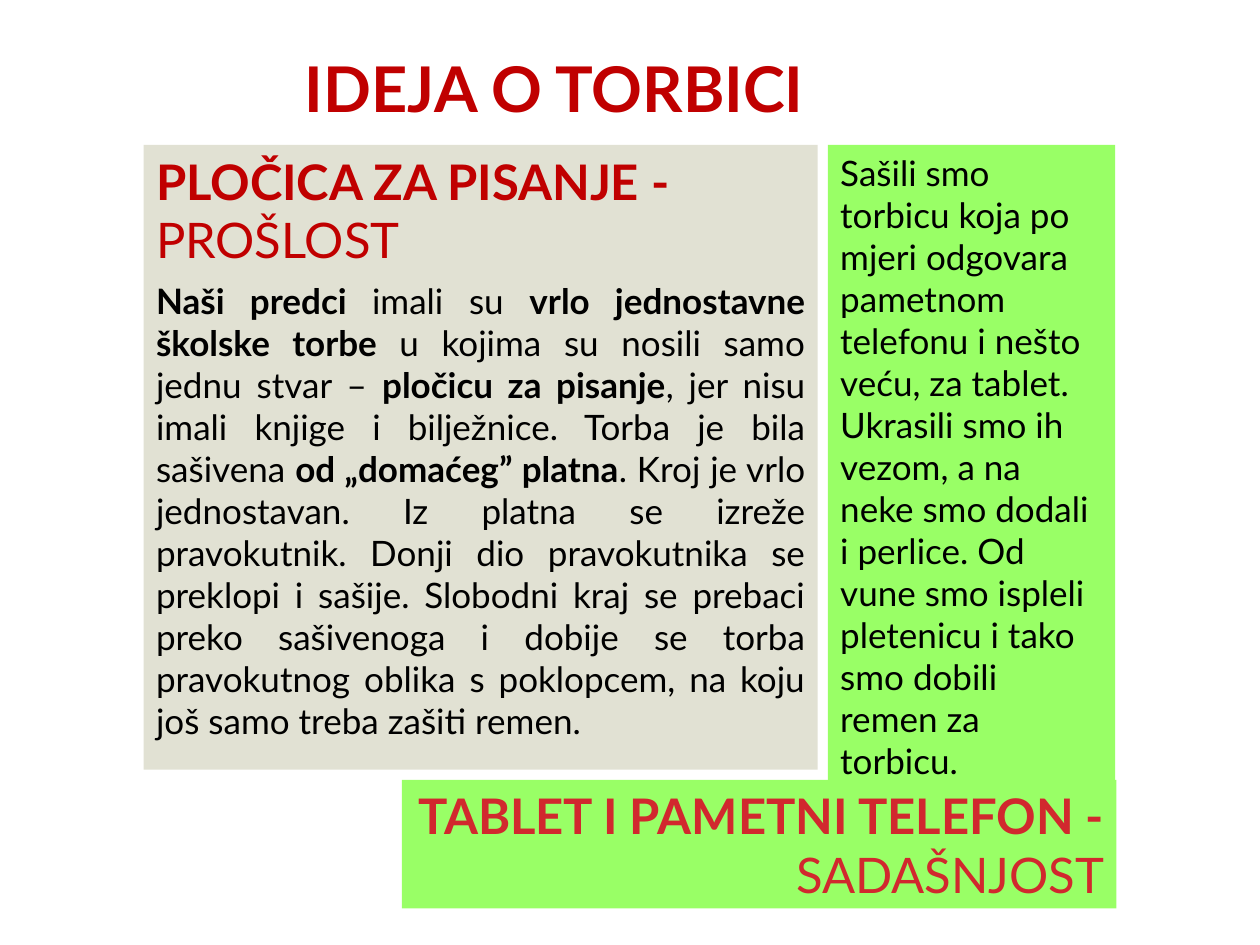
import pptx
import pptx.util
import pptx.dml.color
import pptx.enum.shapes
import pptx.enum.text

Inches = pptx.util.Inches
Pt = pptx.util.Pt
ALIGN = pptx.enum.text.PP_ALIGN
ANCHOR = pptx.enum.text.MSO_ANCHOR

RED, ROSE, BLACK = "C00000", "D1282E", "000000"
SAND, LIME = "E1E1D3", "99FF66"


def color(code):
    return pptx.dml.color.RGBColor.from_string(code)


def write(para, parts, size=20, tint=BLACK, align=ALIGN.LEFT, bold=True,
          before=0, face="Lato"):
    """Fill a paragraph; bold flips from each part to the next."""
    para.alignment = align
    para.space_before = Pt(before)
    for part in parts:
        run = para.add_run()
        run.text = part
        font = run.font
        font.name, font.size, font.bold = face, Pt(size), bold
        font.color.rgb = color(tint)
        bold = not bold


class Deck:
    def __init__(self, wide, high):
        self.show = pptx.Presentation()
        self.show.slide_width = Inches(wide)
        self.show.slide_height = Inches(high)
        self.slide = self.show.slides.add_slide(self.show.slide_layouts[6])

    def title(self, area, text, **style):
        box = self.slide.shapes.add_textbox(*map(Inches, area))
        frame = box.text_frame
        frame.word_wrap = True
        frame.vertical_anchor = ANCHOR.BOTTOM
        frame.margin_left = frame.margin_right = Inches(0.05)
        frame.margin_top = frame.margin_bottom = 0
        write(frame.paragraphs[0], [text], **style)

    def panel(self, area, fill, anchor=ANCHOR.TOP):
        kind = pptx.enum.shapes.MSO_SHAPE.RECTANGLE
        box = self.slide.shapes.add_shape(kind, *map(Inches, area))
        box.shadow.inherit = False
        box.fill.solid()
        box.fill.fore_color.rgb = color(fill)
        box.line.fill.background()
        frame = box.text_frame
        frame.word_wrap = True
        frame.vertical_anchor = anchor
        return frame


def main():
    deck = Deck(10, 7.5)
    deck.title((0.5, 0.35, 7.92, 0.64), "IDEJA O TORBICI ",
               size=36, tint=RED, align=ALIGN.CENTER)

    # Present: heading below
    now = deck.panel((3.19, 6.19, 5.67, 1.02), LIME, ANCHOR.MIDDLE)
    write(now.paragraphs[0], ["TABLET I PAMETNI TELEFON - ", "SADAŠNJOST"],
          size=28, tint=ROSE, align=ALIGN.RIGHT)

    # Past: heading and story
    past = deck.panel((1.14, 1.15, 5.35, 4.96), SAND)
    write(past.paragraphs[0], ["PLOČICA ZA PISANJE - ", "PROŠLOST"],
          size=28, tint=RED)
    write(past.add_paragraph(), [
        "Naši predci ",
        "imali su ",
        "vrlo jednostavne školske torbe ",
        "u kojima su nosili samo jednu stvar – ",
        "pločicu za pisanje",
        ", jer nisu imali knjige i bilježnice. Torba je bila sašivena ",
        "od „domaćeg” platna",
        ". Kroj je vrlo jednostavan. Iz platna se izreže pravokutnik. "
        "Donji dio pravokutnika se preklopi i sašije. Slobodni kraj se "
        "prebaci preko sašivenoga i dobije se torba pravokutnog oblika s "
        "poklopcem, na koju još samo treba zašiti remen. ",
    ], align=ALIGN.JUSTIFY, before=6)

    # Present: story at the right
    side = deck.panel((6.57, 1.15, 2.28, 5.04), LIME)
    write(side.paragraphs[0], [
        "Sašili smo torbicu koja po mjeri odgovara pametnom telefonu i nešto "
        "veću, za tablet. Ukrasili smo ih vezom, a na neke smo dodali i "
        "perlice. Od vune smo ispleli pletenicu i tako smo dobili remen za "
        "torbicu."], bold=False)

    deck.show.save("out.pptx")


if __name__ == "__main__":
    main()
